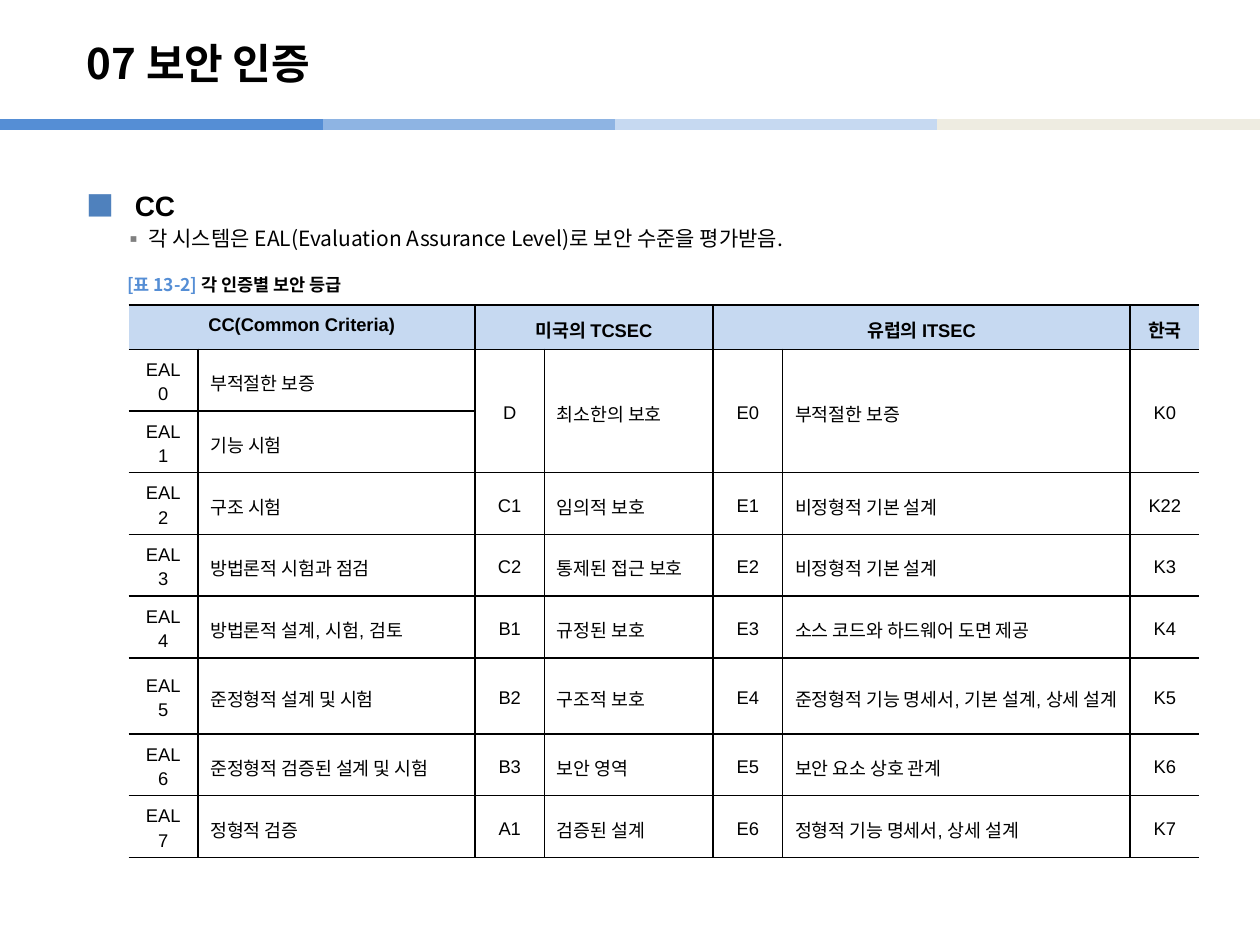
from lxml.etree import SubElement
from pptx import Presentation
from pptx.dml.color import RGBColor
from pptx.enum.text import MSO_ANCHOR, MSO_AUTO_SIZE, PP_ALIGN
from pptx.oxml.ns import qn
from pptx.util import Inches, Pt

WIDTH, HEIGHT = Inches(10), Inches(7.5)
LATIN, KOREAN = "Arial", "Noto Sans CJK KR"
COLORS = {
    "text": "000000", "white": "FFFFFF", "header": "C6D9F1", "caption": "558ED5",
    "square": "4F81BD", "small_square": "808080",
    "bar1": "558ED5", "bar2": "8EB4E3", "bar3": "C6D9F1", "bar4": "EEECE1",
}

COLUMN_WIDTHS = [0.55, 2.2, 0.55, 1.34, 0.55, 2.76, 0.55]
HEADER_HEIGHT, ROW_HEIGHT, TALL_HEIGHT = 0.35, 0.49, 0.6
TALL_ROW = 6  # the EAL5 row holds a two-line description
GRADES = [
    ["CC(Common Criteria)", "", "미국의 TCSEC", "", "유럽의 ITSEC", "", "한국"],
    ["EAL0", "부적절한 보증", "D", "최소한의 보호", "E0", "부적절한 보증", "K0"],
    ["EAL1", "기능 시험", "", "", "", "", ""],
    ["EAL2", "구조 시험", "C1", "임의적 보호", "E1", "비정형적 기본 설계", "K22"],
    ["EAL3", "방법론적 시험과 점검", "C2", "통제된 접근 보호", "E2", "비정형적 기본 설계", "K3"],
    ["EAL4", "방법론적 설계, 시험, 검토", "B1", "규정된 보호", "E3",
     "소스 코드와 하드웨어 도면 제공", "K4"],
    ["EAL5", "준정형적 설계 및 시험", "B2", "구조적 보호", "E4",
     "준정형적 기능 명세서, 기본 설계, 상세 설계", "K5"],
    ["EAL6", "준정형적 검증된 설계 및 시험", "B3", "보안 영역", "E5", "보안 요소 상호 관계", "K6"],
    ["EAL7", "정형적 검증", "A1", "검증된 설계", "E6", "정형적 기능 명세서, 상세 설계", "K7"],
]


def rgb(key):
    return RGBColor.from_string(COLORS[key])


def place(box, left, top, width, height):
    box.left, box.top = Inches(left), Inches(top)
    box.width, box.height = Inches(width), Inches(height)


def add_run(paragraph, text, size, font=KOREAN, bold=False, color="text"):
    run = paragraph.add_run()
    run.text = text
    run.font.size, run.font.bold, run.font.name = Pt(size), bold, font
    run.font.color.rgb = rgb(color)
    SubElement(run._r.get_or_add_rPr(), qn("a:ea"), typeface=KOREAN)


def set_bullet(paragraph, char, color, margin, indent):
    properties = paragraph._p.get_or_add_pPr()
    properties.set("marL", str(Inches(margin)))
    properties.set("indent", str(Inches(indent)))
    bullet_color = SubElement(properties, qn("a:buClr"))
    SubElement(bullet_color, qn("a:srgbClr"), val=COLORS[color])
    SubElement(properties, qn("a:buFont"), typeface=KOREAN)
    SubElement(properties, qn("a:buChar"), char=char)


def add_bar(slide, start, end, color):
    y = Inches(0.99)
    bar = slide.shapes.add_connector(1, int(WIDTH * start), y, int(WIDTH * end), y)
    bar.line.color.rgb = rgb(color)
    bar.line.width = Pt(6)
    SubElement(bar._element.spPr, qn("a:effectLst"))


def add_title(slide):
    title = slide.shapes.title
    place(title, 0.59, 0.2, 8.27, 0.6)
    frame = title.text_frame
    frame.auto_size = MSO_AUTO_SIZE.NONE
    frame.vertical_anchor = MSO_ANCHOR.MIDDLE
    frame.paragraphs[0].alignment = PP_ALIGN.LEFT
    add_run(frame.paragraphs[0], "07 보안 인증", 24, bold=True)


def add_body(slide):
    body = slide.placeholders[1]
    place(body, 0.59, 1.31, 8.98, 5.91)
    frame = body.text_frame
    frame.auto_size = MSO_AUTO_SIZE.NONE
    heading = frame.paragraphs[0]
    set_bullet(heading, "■", "square", 0.38, -0.38)
    heading.line_spacing, heading.space_before = 1.5, Pt(0)
    add_run(heading, "CC", 16, LATIN, bold=True)
    detail = frame.add_paragraph()
    detail.level = 1
    set_bullet(detail, "▪", "small_square", 0.49, -0.2)
    detail.space_before, detail.space_after = Pt(2.4), Pt(4)
    add_run(detail, "각 시스템은 EAL(Evaluation Assurance Level)로 보안 수준을 평가받음.", 12)


def add_caption(slide):
    caption = slide.shapes.add_textbox(Inches(0.91), Inches(2.1), Inches(2.09), Inches(0.31))
    frame = caption.text_frame
    frame.word_wrap = False
    frame.vertical_anchor = MSO_ANCHOR.MIDDLE
    add_run(frame.paragraphs[0], "[표 13-2] ", 10, bold=True, color="caption")
    add_run(frame.paragraphs[0], "각 인증별 보안 등급", 10, bold=True)


def set_borders(cell, open_sides):
    properties = cell._tc.get_or_add_tcPr()
    for side in ("lnL", "lnR", "lnT", "lnB"):
        border = SubElement(properties, qn(f"a:{side}"), w=str(Pt(1)))
        if side in open_sides:
            SubElement(border, qn("a:noFill"))
        else:
            fill = SubElement(border, qn("a:solidFill"))
            SubElement(fill, qn("a:srgbClr"), val=COLORS["text"])


def fill_cell(cell, text, row, column):
    header = row == 0
    last = len(COLUMN_WIDTHS) - 1
    set_borders(cell, {0: ("lnL",), last: ("lnR",)}.get(column, ()))
    cell.fill.solid()
    cell.fill.fore_color.rgb = rgb("header" if header else "white")
    cell.vertical_anchor = MSO_ANCHOR.TOP if header else MSO_ANCHOR.MIDDLE
    if text:
        paragraph = cell.text_frame.paragraphs[0]
        centred = header or column % 2 == 0
        paragraph.alignment = PP_ALIGN.CENTER if centred else PP_ALIGN.LEFT
        paragraph.line_spacing = 1.2
        add_run(paragraph, text, 10.5, LATIN, bold=header)


def add_grades(slide):
    heights = [HEADER_HEIGHT] + [ROW_HEIGHT] * (len(GRADES) - 1)
    heights[TALL_ROW] = TALL_HEIGHT
    table = slide.shapes.add_table(
        len(GRADES), len(COLUMN_WIDTHS), Inches(1.02), Inches(2.42),
        Inches(sum(COLUMN_WIDTHS)), Inches(sum(heights))).table
    table.first_row = table.horz_banding = False
    for column, width in zip(table.columns, COLUMN_WIDTHS):
        column.width = Inches(width)
    for row, height in zip(table.rows, heights):
        row.height = Inches(height)
    for r, texts in enumerate(GRADES):
        for c, text in enumerate(texts):
            fill_cell(table.cell(r, c), text, r, c)
    # Header pairs, then the grades shared by EAL0 and EAL1
    for c in (0, 2, 4):
        table.cell(0, c).merge(table.cell(0, c + 1))
    for c in range(2, len(COLUMN_WIDTHS)):
        table.cell(1, c).merge(table.cell(2, c))


def main():
    deck = Presentation()
    deck.slide_width, deck.slide_height = WIDTH, HEIGHT
    slide = deck.slides.add_slide(deck.slide_layouts[1])
    # Divider: equal bars, the first one drawn last over its neighbour
    bar = 0.256
    for i in (1, 2, 3):
        add_bar(slide, 1 - (4 - i) * bar, 1 - (3 - i) * bar, f"bar{i + 1}")
    add_bar(slide, 0, bar, "bar1")
    # Content
    add_title(slide)
    add_body(slide)
    add_grades(slide)
    add_caption(slide)
    deck.save("out.pptx")


if __name__ == "__main__":
    main()
